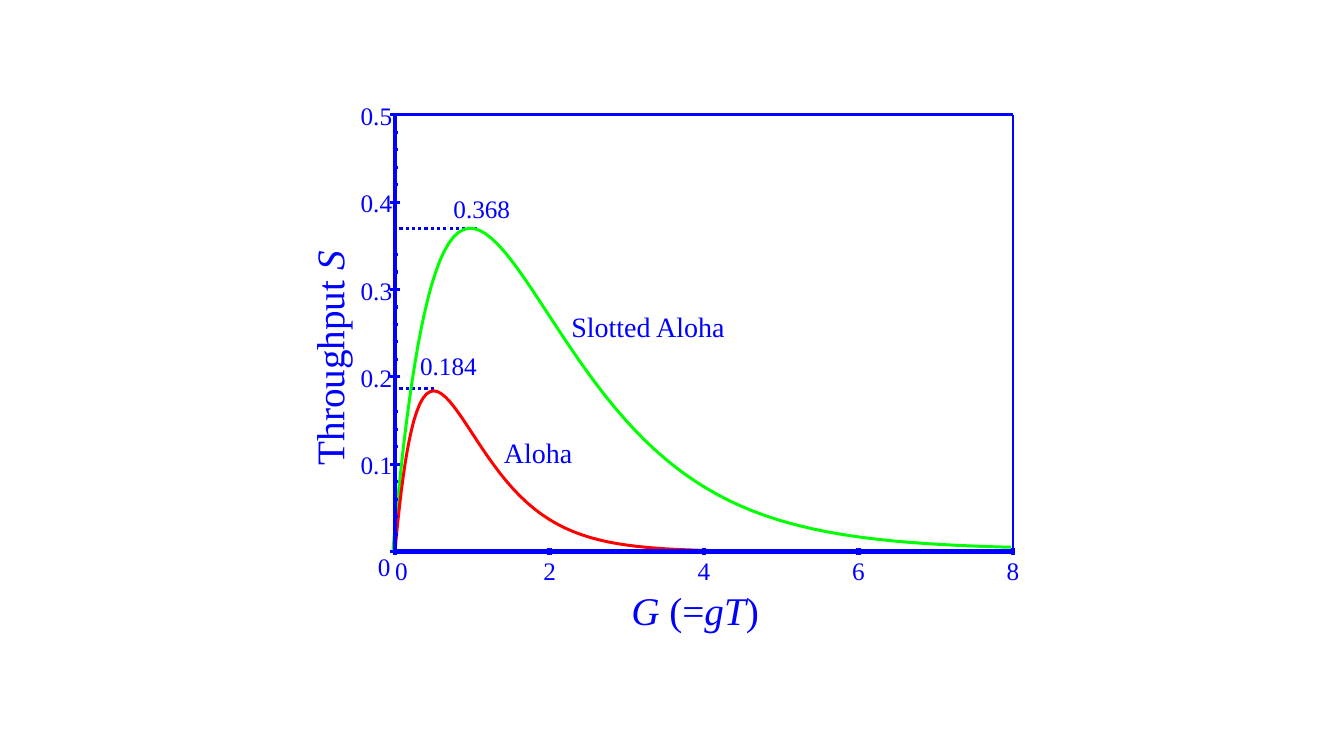
from dataclasses import dataclass
from math import exp

from lxml.etree import SubElement
from pptx import Presentation
from pptx.dml.color import RGBColor
from pptx.enum.dml import MSO_LINE_DASH_STYLE as Dash
from pptx.enum.shapes import MSO_CONNECTOR
from pptx.enum.text import MSO_AUTO_SIZE, PP_ALIGN
from pptx.oxml.ns import qn
from pptx.shapes.shapetree import GroupShapes
from pptx.util import Pt

BLUE, GREEN, RED = "0000FF", "00FF00", "FF0000"
FONT = "Times New Roman"

# Plot area in points, and the value ranges it spans
LEFT, TOP, RIGHT, BOTTOM = 282.2, 82.0, 723.6, 394.0
G_MAX, S_MAX = 8, 0.5
G_STEPS, S_STEPS = 20, 25
MAJOR_EVERY = 5
CURVE_STEPS = 80


@dataclass
class Span:
    text: str
    italic: bool = False


@dataclass
class Label:
    spans: list[Span]
    left: float
    top: float
    width: float
    height: float
    size: float
    align: PP_ALIGN = PP_ALIGN.LEFT
    rotation: float = 0
    tight: bool = False


@dataclass
class Curve:
    """Throughput G·exp(-decay·G), shifted from the plot's origin."""
    decay: float
    color: str
    shift: float


@dataclass
class Line:
    start: tuple[float, float]
    end: tuple[float, float]
    width: float = 2.25
    dotted: bool = False


LABELS = [
    Label([Span("Slotted Aloha")], 401, 217.4, 156, 31, 20),
    Label([Span("Aloha")], 352.8, 307.4, 156, 31, 20),
    Label([Span("0.368")], 316.8, 134.6, 90, 28.8, 18),
    Label([Span("0.184")], 293, 247, 90, 28.8, 18),
    Label([Span("G ", True), Span("(="), Span("gT", True), Span(")")],
          430.6, 415.4, 131.8, 41, 28, PP_ALIGN.CENTER),
    Label([Span("Throughput "), Span("S", True)],
          136, 235.4, 198, 41, 28, PP_ALIGN.CENTER, rotation=270),
]
PEAK_LINES = [
    Line((280.8, 163.4), (340.6, 163.4), dotted=True),
    Line((280.8, 277.2), (311, 277.2), dotted=True),
]
CURVES = [Curve(1, GREEN, -1.4), Curve(2, RED, 0)]
FRAME = [
    Line((RIGHT, BOTTOM), (RIGHT, TOP), 0),
    Line((LEFT, TOP), (RIGHT, TOP), 0),
]
G_AXIS = Line((LEFT, BOTTOM), (RIGHT, BOTTOM), 3)
S_AXIS = Line((LEFT, BOTTOM), (LEFT, TOP))
DOTTED_S_STEPS = {9, 18, 19}


def rgb(color: str) -> RGBColor:
    return RGBColor.from_string(color)


def plot_x(g: float) -> float:
    return LEFT + (RIGHT - LEFT) * g / G_MAX


def plot_y(s: float) -> float:
    return BOTTOM - (BOTTOM - TOP) * s / S_MAX


def draw_label(shapes: GroupShapes, label: Label) -> None:
    box = shapes.add_textbox(Pt(label.left), Pt(label.top),
                             Pt(label.width), Pt(label.height))
    box.rotation = label.rotation
    frame = box.text_frame
    frame.word_wrap = not label.tight
    frame.auto_size = MSO_AUTO_SIZE.SHAPE_TO_FIT_TEXT
    if label.tight:
        frame.margin_left = frame.margin_right = 0
        frame.margin_top = frame.margin_bottom = 0
    para = frame.paragraphs[0]
    para.alignment = label.align
    for span in label.spans:
        run = para.add_run()
        run.text = span.text
        run.font.name = FONT
        run.font.size = Pt(label.size)
        run.font.italic = span.italic
        run.font.color.rgb = rgb(BLUE)


def draw_line(shapes: GroupShapes, line: Line) -> None:
    connector = shapes.add_connector(
        MSO_CONNECTOR.STRAIGHT, *map(Pt, line.start), *map(Pt, line.end))
    connector.line.color.rgb = rgb(BLUE)
    connector.line.width = Pt(line.width)
    if line.dotted:
        connector.line.dash_style = Dash.ROUND_DOT
    SubElement(connector._element.spPr, qn("a:effectLst"))


def draw_curve(shapes: GroupShapes, curve: Curve) -> None:
    """Sample more densely near the origin, where the curve is steep."""
    points = []
    for step in range(CURVE_STEPS + 1):
        g = G_MAX * (step / CURVE_STEPS) ** 2
        s = g * exp(-curve.decay * g)
        points.append((Pt(plot_x(g) + curve.shift), Pt(plot_y(s) + curve.shift)))
    builder = shapes.build_freeform(*points[0])
    builder.add_line_segments(points[1:], close=False)
    shape = builder.convert_to_shape()
    shape.shadow.inherit = False
    shape.fill.background()
    shape.line.color.rgb = rgb(curve.color)
    shape.line.width = Pt(2.13)


def g_ticks() -> list[Line]:
    ticks = []
    for step in range(G_STEPS, -1, -1):
        x = plot_x(G_MAX * step / G_STEPS)
        half = 2.5 if step % MAJOR_EVERY == 0 else 1.1
        width = 3 if step > 1 else 2.25
        ticks.append(Line((x, BOTTOM + half), (x, BOTTOM - half), width))
    return ticks


def s_ticks() -> list[Line]:
    ticks = []
    for step in range(S_STEPS, -1, -1):
        y = plot_y(S_MAX * step / S_STEPS)
        half = 3.6 if step % MAJOR_EVERY == 0 else 1.8
        ticks.append(Line((LEFT - half, y), (LEFT + half, y),
                          dotted=step in DOTTED_S_STEPS))
    return ticks


def axis_numbers() -> list[Label]:
    numbers = []
    for g in range(G_MAX, -1, -2):
        left = plot_x(g) - 4.5 if g else LEFT
        numbers.append(Label([Span(str(g))], left, 396.7, 9, 21.6, 18, tight=True))
    for tenths in range(5, 0, -1):
        s = tenths / 10
        numbers.append(Label([Span(f"{s:.1f}")], 257.6, plot_y(s) - 10.3,
                             22.5, 21.6, 18, tight=True))
    numbers.append(Label([Span("0")], 270, 394, 9, 21.6, 18, tight=True))
    return numbers


def main() -> None:
    deck = Presentation()
    deck.slide_width, deck.slide_height = Pt(960), Pt(540)
    page = deck.slides.add_slide(deck.slide_layouts[6])
    shapes = page.shapes.add_group_shape().shapes
    for label in LABELS:
        draw_label(shapes, label)
    for line in PEAK_LINES:
        draw_line(shapes, line)
    for curve in CURVES:
        draw_curve(shapes, curve)
    for line in [*FRAME, *g_ticks(), G_AXIS, *s_ticks(), S_AXIS]:
        draw_line(shapes, line)
    for number in axis_numbers():
        draw_label(shapes, number)
    deck.save("out.pptx")


if __name__ == "__main__":
    main()
